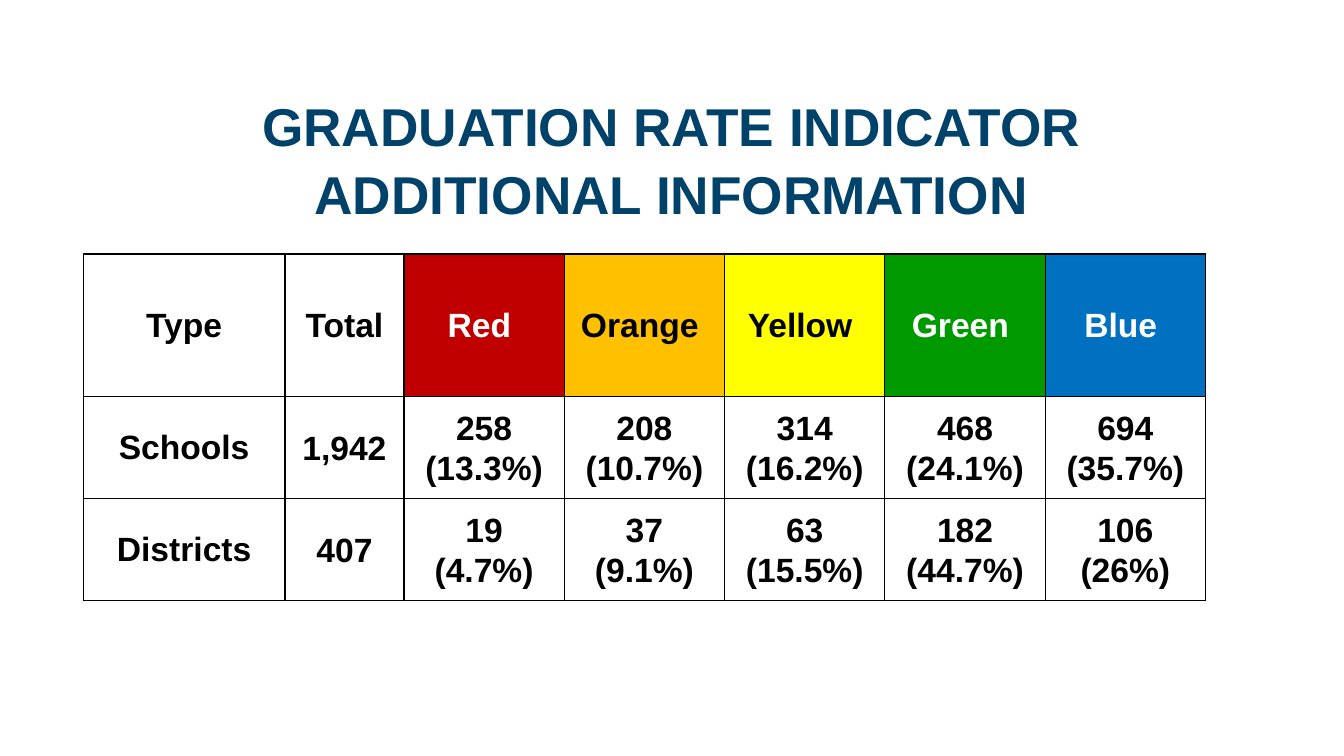
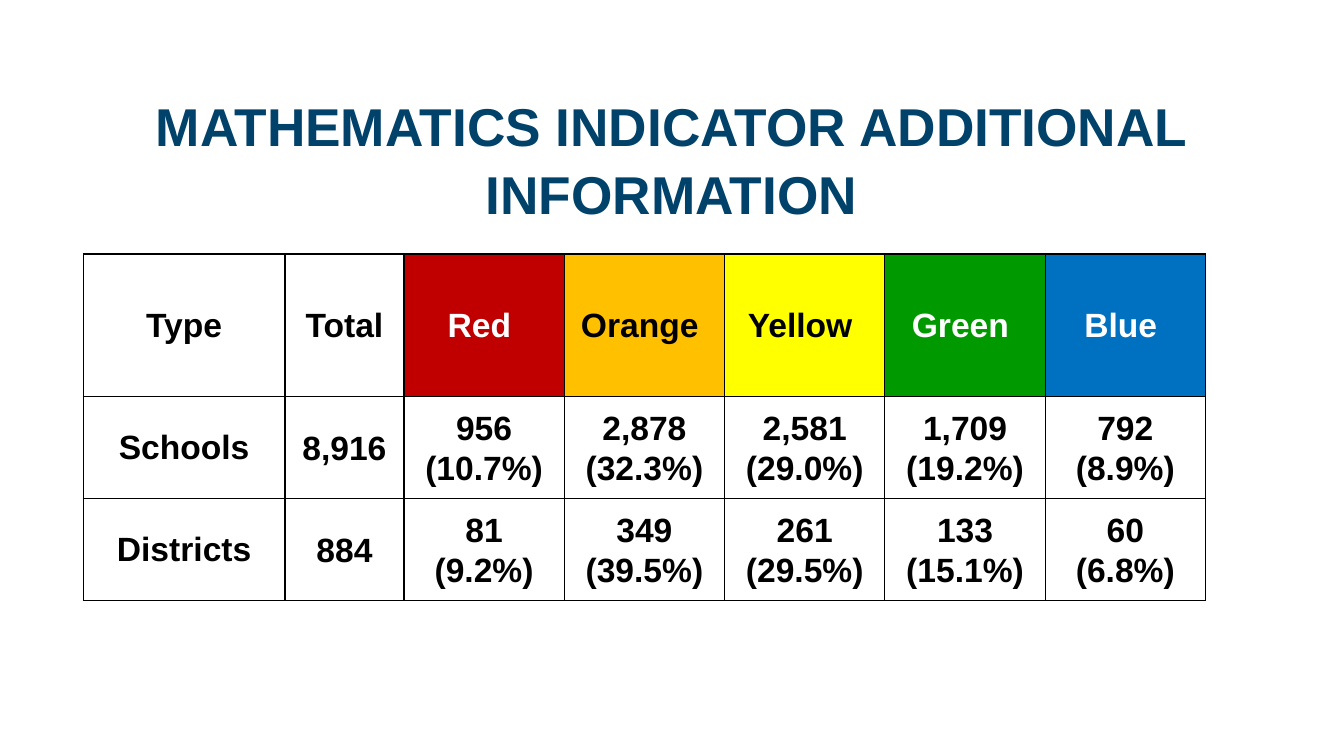
"""Build two slides with indicator results by colour for schools and districts."""
from lxml import etree
from pptx import Presentation
from pptx import util as u
from pptx.dml.color import RGBColor
from pptx.enum import text
from pptx.oxml import ns

NAVY = RGBColor(0x01, 0x42, 0x6A)
BLACK = RGBColor(0x00, 0x00, 0x00)
WHITE = RGBColor(0xFF, 0xFF, 0xFF)
RED = RGBColor(0xC0, 0x00, 0x00)
ORANGE = RGBColor(0xFF, 0xC0, 0x00)
YELLOW = RGBColor(0xFF, 0xFF, 0x00)
GREEN = RGBColor(0x00, 0x99, 0x00)
BLUE = RGBColor(0x00, 0x70, 0xC0)

HEADERS = [
    ("Type", None, BLACK),
    ("Total", None, BLACK),
    ("Red ", RED, WHITE),
    ("Orange ", ORANGE, BLACK),
    ("Yellow ", YELLOW, BLACK),
    ("Green ", GREEN, WHITE),
    ("Blue ", BLUE, WHITE),
]

INDICATORS = [
    ("GRADUATION RATE INDICATOR ADDITIONAL INFORMATION", [
        ("Schools", "1,942", "258\v(13.3%)", "208\v(10.7%)", "314\v(16.2%)",
         "468\v(24.1%)", "694\v(35.7%)"),
        ("Districts", "407", "19\v(4.7%)", "37\v(9.1%)", "63\v(15.5%)",
         "182\v(44.7%)", "106\v(26%)"),
    ]),
    ("MATHEMATICS INDICATOR ADDITIONAL INFORMATION", [
        ("Schools", "8,916", "956\v(10.7%)", "2,878\v(32.3%)", "2,581\v(29.0%)",
         "1,709\v(19.2%)", "792\v(8.9%)"),
        ("Districts", "884", "81\v(9.2%)", "349\v(39.5%)", "261\v(29.5%)",
         "133\v(15.1%)", "60\v(6.8%)"),
    ]),
]


class Deck:
    """Hold the shared style and the current slide."""

    font_name = "Arial"
    title_size = u.Pt(38)
    title_spacing = u.Pt(48.8)
    table_size = u.Pt(24)
    border_width = u.Pt(1)
    left = u.Cm(2.1)
    column_widths = [u.Cm(5.08), u.Cm(3)] + [u.Cm(4.04)] * 5
    row_heights = [u.Cm(3.6), u.Cm(2.57), u.Cm(2.57)]

    def __init__(self):
        self.presentation = Presentation()
        self.presentation.slide_width = u.Cm(33.87)
        self.presentation.slide_height = u.Cm(19.05)
        self.slide = None

    def style(self, paragraph, size, color):
        paragraph.alignment = text.PP_ALIGN.CENTER
        for run in paragraph.runs:
            run.font.name = self.font_name
            run.font.size = size
            run.font.bold = True
            run.font.color.rgb = color

    def add_slide(self, title):
        layout = self.presentation.slide_layouts.get_by_name("Title Only")
        self.slide = self.presentation.slides.add_slide(layout)
        shape = self.slide.shapes.title
        shape.left, shape.top = self.left, u.Cm(2.03)
        shape.width, shape.height = u.Cm(29.64), u.Cm(3.78)
        frame = shape.text_frame
        frame.text = title
        frame.word_wrap = True
        frame.auto_size = text.MSO_AUTO_SIZE.NONE
        frame.vertical_anchor = text.MSO_ANCHOR.BOTTOM
        paragraph = frame.paragraphs[0]
        paragraph.line_spacing = self.title_spacing
        self.style(paragraph, self.title_size, NAVY)

    def add_borders(self, cell):
        properties = cell._tc.get_or_add_tcPr()
        for side in ("a:lnL", "a:lnR", "a:lnT", "a:lnB"):
            line = etree.SubElement(properties, ns.qn(side), w=str(self.border_width))
            fill = etree.SubElement(line, ns.qn("a:solidFill"))
            etree.SubElement(fill, ns.qn("a:srgbClr"), val=str(BLACK))

    def fill_cell(self, cell, label, fill=None, color=BLACK):
        cell.text_frame.text = label
        cell.vertical_anchor = text.MSO_ANCHOR.MIDDLE
        self.style(cell.text_frame.paragraphs[0], self.table_size, color)
        self.add_borders(cell)
        if fill is None:
            cell.fill.background()
        else:
            cell.fill.solid()
            cell.fill.fore_color.rgb = fill

    def fill_value(self, cell, value):
        self.fill_cell(cell, value)
        cell.margin_left = cell.margin_right = u.Cm(0.18)
        cell.margin_top = cell.margin_bottom = 0
        cell.text_frame.paragraphs[0].line_spacing = 1.07

    def add_results(self, rows):
        table = self.slide.shapes.add_table(
            len(self.row_heights), len(self.column_widths), self.left, u.Cm(6.4),
            sum(self.column_widths), sum(self.row_heights)).table
        table.first_row = table.horz_banding = False
        for column, width in zip(table.columns, self.column_widths):
            column.width = width
        for row, height in zip(table.rows, self.row_heights):
            row.height = height
        for index, header in enumerate(HEADERS):
            self.fill_cell(table.cell(0, index), *header)
        for row_index, (name, *values) in enumerate(rows, 1):
            self.fill_cell(table.cell(row_index, 0), name)
            for column_index, value in enumerate(values, 1):
                self.fill_value(table.cell(row_index, column_index), value)


def main():
    deck = Deck()
    for title, rows in INDICATORS:
        deck.add_slide(title)
        deck.add_results(rows)
    deck.presentation.save("out.pptx")


if __name__ == "__main__":
    main()
